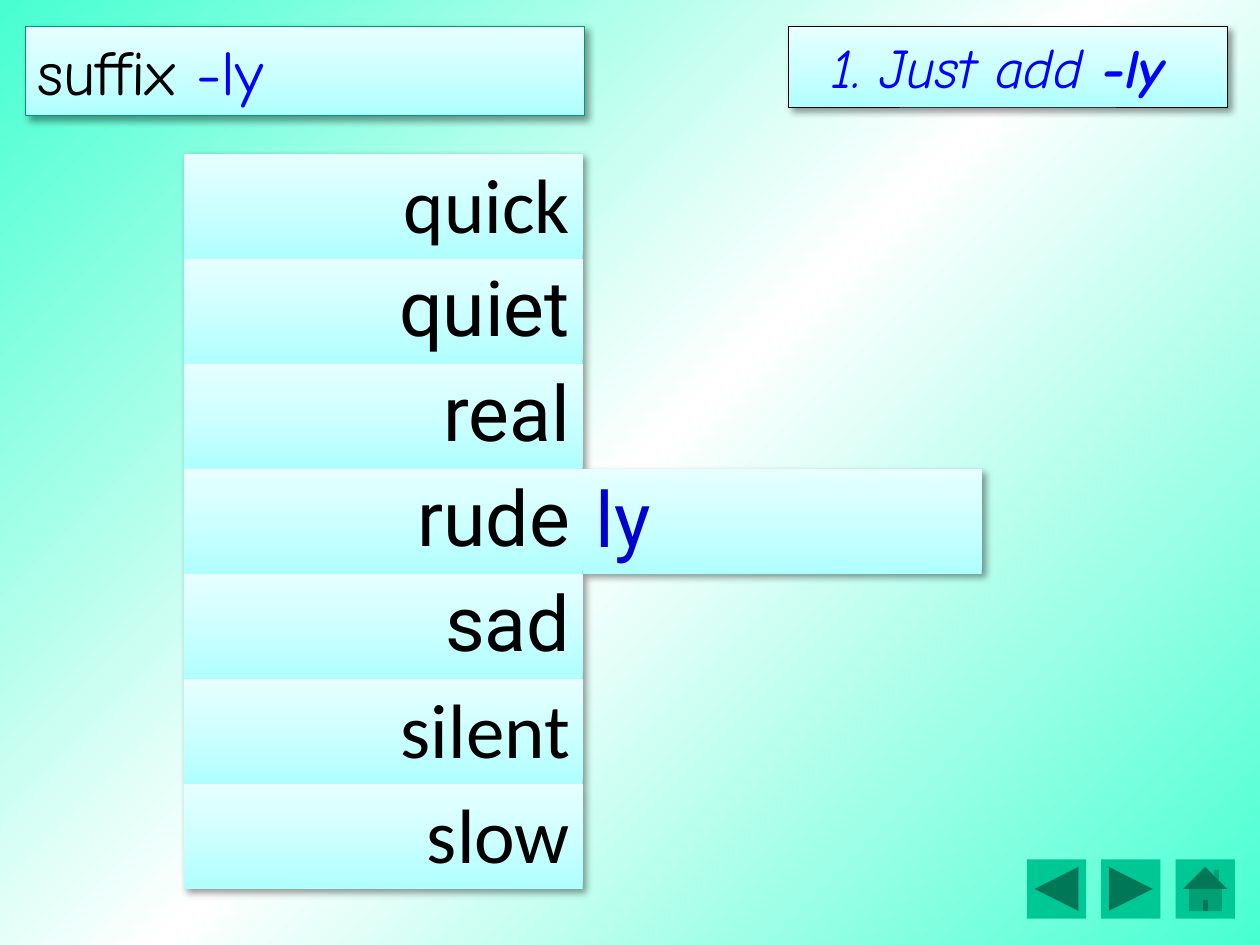
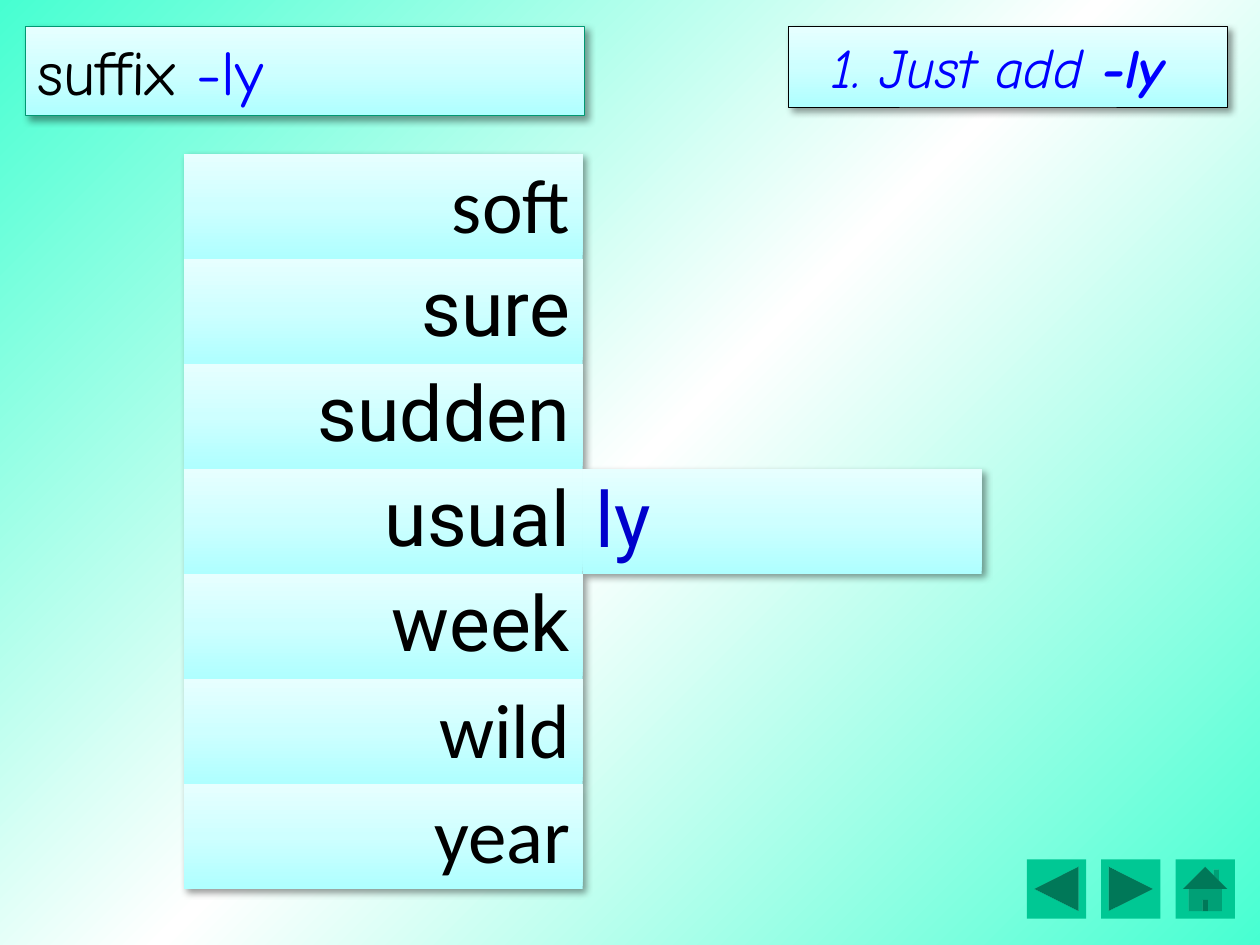
from lxml import etree
from pptx import Presentation
from pptx.dml.color import RGBColor
from pptx.enum import shapes, text
from pptx.oxml import ns
from pptx.util import Inches, Pt

# Shared colours and fonts
BLACK = RGBColor(0x00, 0x00, 0x00)
BLUE = RGBColor(0x00, 0x00, 0xFF)
SUFFIX_BLUE = RGBColor(0x00, 0x00, 0xCC)
BUTTON_GREEN = RGBColor(0x00, 0xC8, 0x94)
EDGE_GREEN = RGBColor(0x00, 0x99, 0x73)
MINT = RGBColor(0x47, 0xFF, 0xD1)
WHITE = RGBColor(0xFF, 0xFF, 0xFF)
PANEL = [RGBColor(0xAF, 0xFF, 0xFF), RGBColor(0xCE, 0xFF, 0xFF),
         RGBColor(0xE7, 0xFF, 0xFF)]
HEADING_FONT = "Comic Neue"
ROW_FONTS = ["Calibri"] + ["Roboto"] * 4 + ["Calibri"] * 2
NO_STYLE = "{2D5ABB26-0587-4C30-8999-92F81FD0307C}"

SUFFIX_ROW = 3
WORD_LISTS = [
    ["quick", "quiet", "real", "rude", "sad", "silent", "slow"],
    ["soft", "sure", "sudden", "usual", "week", "wild", "year"],
]


def set_gradient(fill, element, colours, angle):
    """Spread the colours evenly; the angle runs counter-clockwise."""
    fill.gradient()
    fill.gradient_angle = angle
    stops = next(element.iter(ns.qn("a:gsLst")))
    for stop in list(stops):
        stops.remove(stop)
    for i, colour in enumerate(colours):
        pos = 100000 * i // (len(colours) - 1)
        stop = etree.SubElement(stops, ns.qn("a:gs"), pos=str(pos))
        etree.SubElement(stop, ns.qn("a:srgbClr"), val=str(colour))


def soft_shadow():
    return etree.fromstring(
        f'<a:effectLst {ns.nsdecls("a")}>'
        f'<a:outerShdw blurRad="{Pt(4)}" dist="{Pt(3)}" dir="2700000" '
        'algn="tl" rotWithShape="0"><a:srgbClr val="000000">'
        '<a:alpha val="40000"/></a:srgbClr></a:outerShdw></a:effectLst>')


def add_run(p, words, font, size, colour, bold=None, italic=None):
    r = p.add_run()
    r.text = words
    r.font.name = font
    r.font.size = Pt(size)
    r.font.color.rgb = colour
    r.font.bold = bold
    r.font.italic = italic


def add_panel(s, left, width, height, edge, edge_width):
    sp = s.shapes.add_shape(shapes.MSO_SHAPE.RECTANGLE, Inches(left),
                            Inches(0.21), Inches(width), Inches(height))
    set_gradient(sp.fill, sp._element, PANEL, 90)
    sp.line.color.rgb = edge
    sp.line.width = Pt(edge_width)
    sp._element.spPr.append(soft_shadow())
    tf = sp.text_frame
    tf.vertical_anchor = text.MSO_ANCHOR.TOP
    tf.auto_size = text.MSO_AUTO_SIZE.SHAPE_TO_FIT_TEXT
    return tf


def add_title(s):
    tf = add_panel(s, 0.2, 4.44, 0.71, EDGE_GREEN, 0.75)
    tf.word_wrap = True
    p = tf.paragraphs[0]
    p.alignment = text.PP_ALIGN.LEFT
    add_run(p, "suffix ", HEADING_FONT, 36, BLACK)
    add_run(p, "-ly", HEADING_FONT, 36, BLUE)


def add_rule(s):
    tf = add_panel(s, 6.26, 3.48, 0.64, BLACK, 0.5)
    tf.word_wrap = False
    p = tf.paragraphs[0]
    p.alignment = text.PP_ALIGN.CENTER
    add_run(p, "1. Just add ", HEADING_FONT, 32, BLUE, italic=True)
    add_run(p, "-ly ", HEADING_FONT, 32, BLUE, bold=True, italic=True)


def add_buttons(s):
    kinds = [shapes.MSO_SHAPE.ACTION_BUTTON_BACK_OR_PREVIOUS,
             shapes.MSO_SHAPE.ACTION_BUTTON_FORWARD_OR_NEXT,
             shapes.MSO_SHAPE.ACTION_BUTTON_HOME]
    for i, kind in enumerate(kinds):
        sp = s.shapes.add_shape(kind, Inches(8.15 + 0.59 * i), Inches(6.82),
                                Inches(0.47), Inches(0.47))
        sp.fill.solid()
        sp.fill.fore_color.rgb = BUTTON_GREEN
        sp.line.fill.background()
        sp.shadow.inherit = False


def fill_cell(cell, words, font, colour, alignment):
    set_gradient(cell.fill, cell._tc, PANEL, 90)
    p = cell.text_frame.paragraphs[0]
    p.alignment = alignment
    add_run(p, words, font, 44, colour)


def add_word_table(s, words):
    frame = s.shapes.add_table(len(words), 2, Inches(1.46), Inches(1.22),
                               Inches(6.33), Inches(5.83))
    table = frame.table
    table.first_row = False
    table.horz_banding = False
    props = table._tbl.tblPr
    props.find(ns.qn("a:tableStyleId")).text = NO_STYLE
    props.insert(0, soft_shadow())
    for row, (word, font) in enumerate(zip(words, ROW_FONTS)):
        fill_cell(table.cell(row, 0), word, font, BLACK,
                  text.PP_ALIGN.RIGHT)
    # The suffix sits beside the middle word
    suffix = table.cell(SUFFIX_ROW, 1)
    fill_cell(suffix, "ly", "Roboto", SUFFIX_BLUE, text.PP_ALIGN.LEFT)
    suffix.vertical_anchor = text.MSO_ANCHOR.MIDDLE


def add_word_slide(prs, words):
    s = prs.slides.add_slide(prs.slide_layouts[6])
    set_gradient(s.background.fill, s._element, [MINT, WHITE, MINT], 315)
    add_buttons(s)
    add_title(s)
    add_word_table(s, words)
    add_rule(s)


def main():
    prs = Presentation()
    prs.slide_width = Inches(10)
    prs.slide_height = Inches(7.5)
    for words in WORD_LISTS:
        add_word_slide(prs, words)
    prs.save("out.pptx")


if __name__ == "__main__":
    main()
